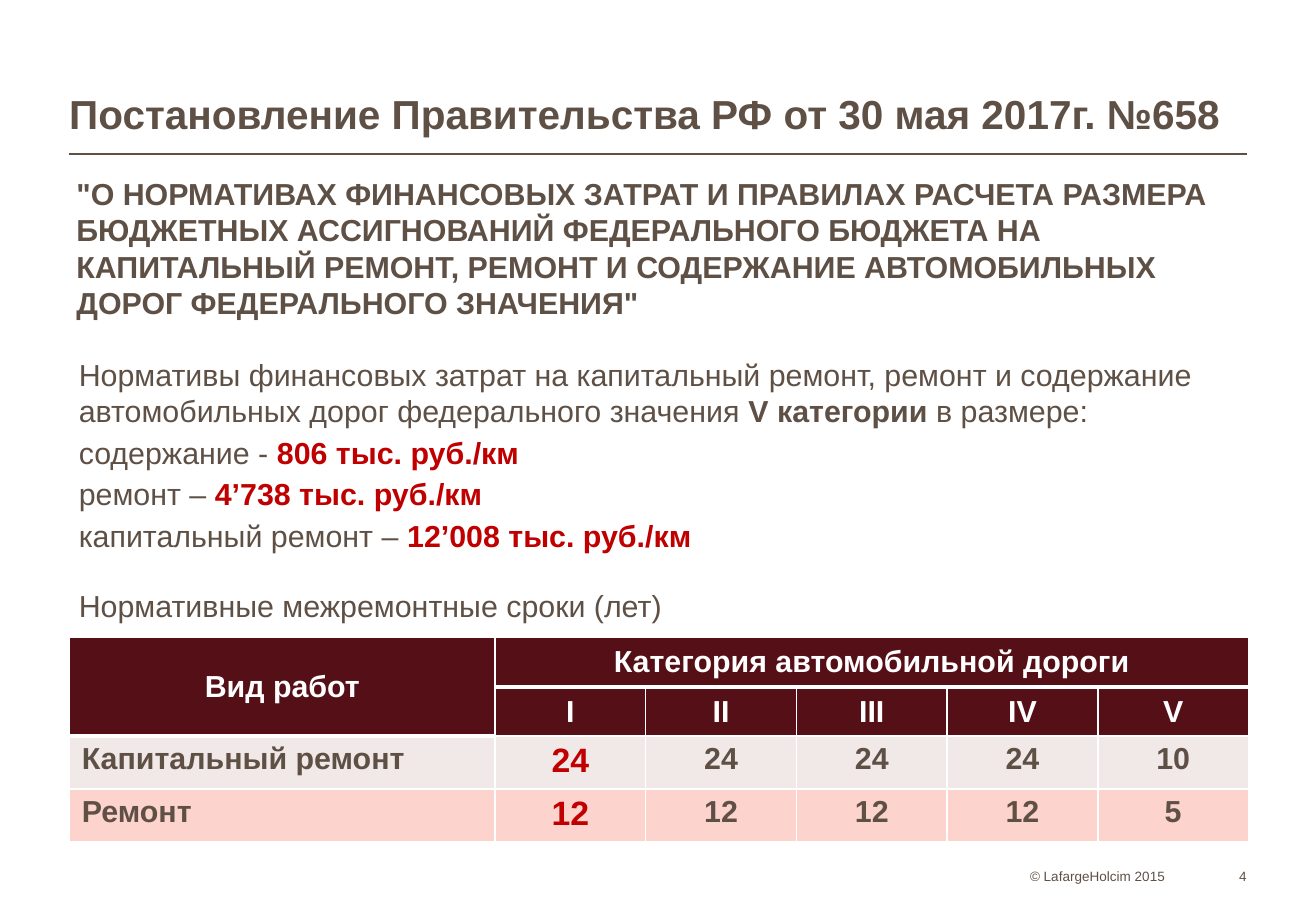
"""Slide on federal road repair standards, with a table of repair intervals."""
from lxml import etree
from pptx import Presentation
from pptx.dml.color import RGBColor
from pptx.enum import shapes, text
from pptx.oxml import ns
from pptx.util import Pt

BROWN = RGBColor(0x5F, 0x50, 0x46)
RED = RGBColor(0xC0, 0x00, 0x00)
WINE = RGBColor(0x55, 0x0F, 0x17)
PALE = RGBColor(0xF1, 0xE8, 0xE8)
PINK = RGBColor(0xFC, 0xD3, 0xCD)
WHITE = RGBColor(0xFF, 0xFF, 0xFF)
LEFT, MID, RIGHT = text.PP_ALIGN.LEFT, text.PP_ALIGN.CENTER, text.PP_ALIGN.RIGHT

deck = Presentation()
deck.slide_width, deck.slide_height = Pt(779.76), Pt(540)
slide = deck.slides.add_slide(deck.slide_layouts[6])


def style(para, size, color, bold=False, align=LEFT):
    para.alignment = align
    font = para.font
    font.name, font.size, font.bold = "Arial", Pt(size), bold
    font.color.rgb = color


def add_box(x, y, w, h, inset=True):
    frame = slide.shapes.add_textbox(Pt(x), Pt(y), Pt(w), Pt(h)).text_frame
    frame.word_wrap = True
    if not inset:
        frame.margin_left = frame.margin_right = 0
        frame.margin_top = frame.margin_bottom = 0
        frame.vertical_anchor = text.MSO_ANCHOR.BOTTOM
    return frame


rule = slide.shapes.add_connector(
    shapes.MSO_CONNECTOR.STRAIGHT, Pt(41), Pt(91.5), Pt(738.7), Pt(91.5))
rule.line.color.rgb = BROWN
rule.line.width = Pt(1)
etree.SubElement(rule.element.spPr, ns.qn("a:effectLst"))

title = add_box(41, 15.1, 697.7, 67, False).paragraphs[0]
title.text = "Постановление Правительства РФ от 30 мая 2017г. №658"
title.line_spacing = 0.95
style(title, 24, BROWN, True)

for x, w, words in [(595.4, 95, "© LafargeHolcim 2015"), (704.9, 33.8, "4")]:
    foot = add_box(x, 511.2, w, 13, False).paragraphs[0]
    foot.text = words
    style(foot, 8, BROWN, align=RIGHT)

decree = add_box(38.2, 100.1, 702.7, 94.3).paragraphs[0]
decree.text = (
    '"О НОРМАТИВАХ ФИНАНСОВЫХ ЗАТРАТ И ПРАВИЛАХ РАСЧЕТА РАЗМЕРА '
    "БЮДЖЕТНЫХ АССИГНОВАНИЙ ФЕДЕРАЛЬНОГО БЮДЖЕТА НА КАПИТАЛЬНЫЙ РЕМОНТ, "
    'РЕМОНТ И СОДЕРЖАНИЕ АВТОМОБИЛЬНЫХ ДОРОГ ФЕДЕРАЛЬНОГО ЗНАЧЕНИЯ"')
style(decree, 18, BROWN, True)

costs = [
    (0, "Нормативы финансовых затрат на капитальный ремонт, ремонт и содержание "
        "автомобильных дорог федерального значения ",
     "V категории ", BROWN, "в размере:"),
    (3, "содержание - ", "806 тыс. руб./км", RED, ""),
    (3, "ремонт – ", "4’738 тыс. руб./км", RED, ""),
    (3, "капитальный ремонт – ", "12’008 тыс. руб./км", RED, ""),
    (20.4, "Нормативные межремонтные сроки (лет)", "", BROWN, ""),
]
body = add_box(39.6, 207.4, 702, 167.8)
for i, (gap, lead, key, color, tail) in enumerate(costs):
    para = body.add_paragraph() if i else body.paragraphs[0]
    para.space_before = Pt(gap)
    style(para, 18, BROWN)
    for words in filter(None, (lead, key, tail)):
        run = para.add_run()
        run.text = words
        if words == key:
            run.font.bold = True
            run.font.color.rgb = color

rows = [
    ["Вид работ", "Категория автомобильной дороги", "", "", "", ""],
    ["", "I", "II", "III", "IV", "V"],
    ["Капитальный ремонт", "24", "24", "24", "24", "10"],
    ["Ремонт", "12", "12", "12", "12", "5"],
]
fills = [WINE, WINE, PALE, PINK]
table = slide.shapes.add_table(
    4, 6, Pt(41.3), Pt(378), Pt(698.5), Pt(116.8)).table
for c, col in enumerate(table.columns):
    col.width = Pt(89.3 if c else 252)
for row in table.rows:
    row.height = Pt(29.2)
table.cell(0, 0).merge(table.cell(1, 0))
table.cell(0, 1).merge(table.cell(0, 5))

for r, row in enumerate(rows):
    for c, words in enumerate(row):
        cell = table.cell(r, c)
        head = 1 if c else 2
        wide = {"T": r == head, "B": r == head - 1 or r == c == 0}
        props = cell._tc.get_or_add_tcPr()
        for side in "LRTB":
            width = Pt(3 if wide.get(side) else 1)
            edge = etree.SubElement(props, ns.qn("a:ln" + side), w=str(width))
            fill = etree.SubElement(edge, ns.qn("a:solidFill"))
            etree.SubElement(fill, ns.qn("a:srgbClr"), val=str(WHITE))
        cell.fill.solid()
        cell.fill.fore_color.rgb = fills[r]
        if words:
            cell.text = words
        para = cell.text_frame.paragraphs[0]
        if r < 2:
            cell.vertical_anchor = text.MSO_ANCHOR.MIDDLE
            style(para, 18, WHITE, True, MID)
        elif c == 1:
            style(para, 20, RED, True, MID)
        else:
            style(para, 18, BROWN, True, MID if c else LEFT)

deck.save("out.pptx")
